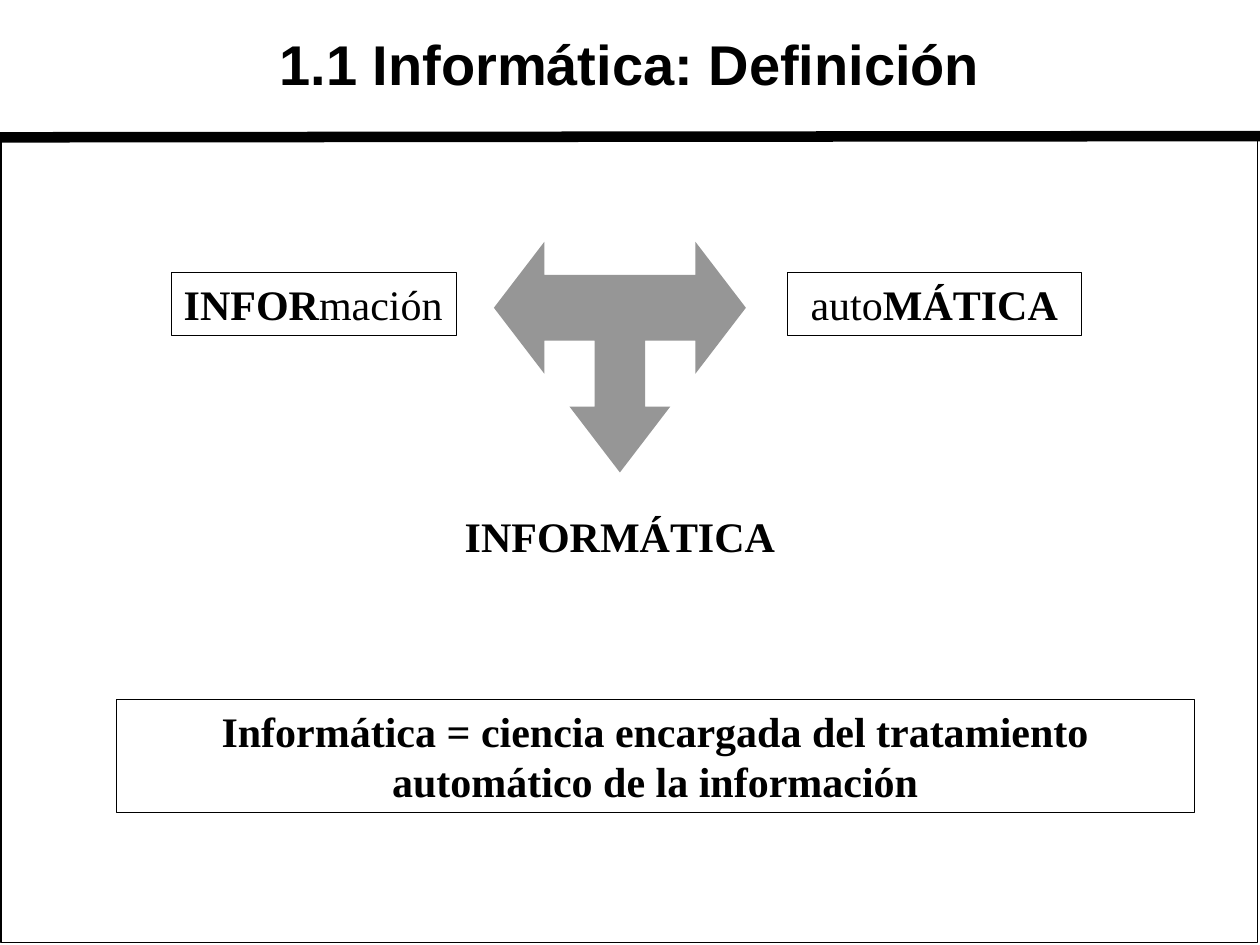
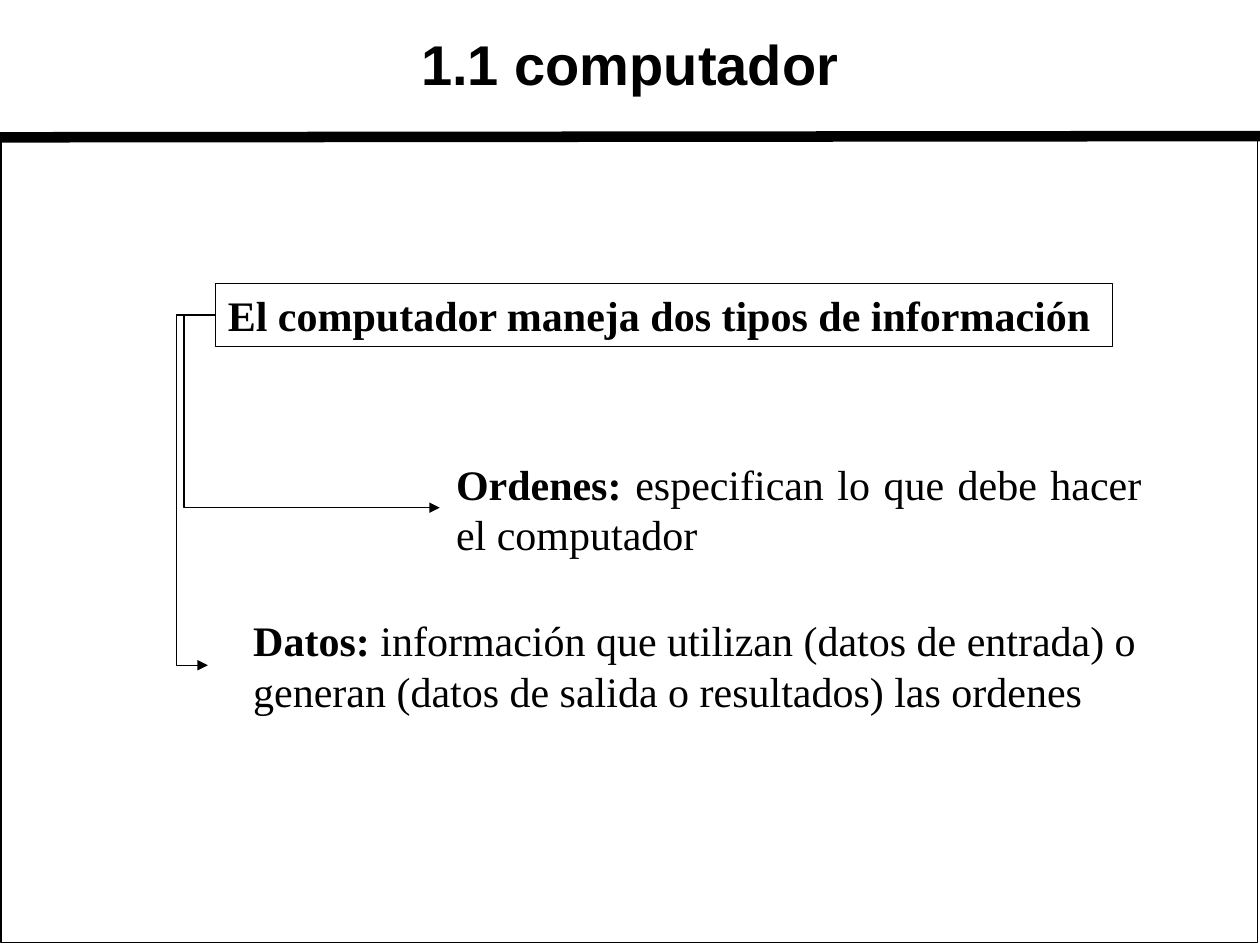
from dataclasses import dataclass

from lxml import etree
from pptx import Presentation
from pptx.dml.color import RGBColor
from pptx.enum.shapes import MSO_CONNECTOR, MSO_SHAPE
from pptx.enum.text import MSO_ANCHOR, MSO_AUTO_SIZE, PP_ALIGN
from pptx.oxml.ns import qn
from pptx.util import Emu, Inches, Pt

LEFT, CENTER, JUSTIFY = PP_ALIGN.LEFT, PP_ALIGN.CENTER, PP_ALIGN.JUSTIFY
MIDDLE, GROW = MSO_ANCHOR.MIDDLE, MSO_AUTO_SIZE.SHAPE_TO_FIT_TEXT
STRAIGHT, ELBOW = MSO_CONNECTOR.STRAIGHT, MSO_CONNECTOR.ELBOW
RECTANGLE = MSO_SHAPE.RECTANGLE

COLORS = {"ink": "000000", "arrow": "969696"}
TITLE_FONT, BODY_FONT = "Arial", "Times New Roman"
TITLE_SIZE, BODY_SIZE = Pt(32), Pt(24)
SLIDE_WIDTH, SLIDE_HEIGHT = Inches(10), Inches(7.5)
COLUMNS, ROWS = 100, 75
TITLE_ONLY = 5


@dataclass(frozen=True)
class Area:
    """Left, top, width and height in grid columns and rows."""
    left: float
    top: float
    width: float
    height: float

    def emu(self) -> tuple[Emu, Emu, Emu, Emu]:
        return col(self.left), row(self.top), col(self.width), row(self.height)


@dataclass(frozen=True)
class Statement:
    """Text with its phrases as (words, bold) pairs."""
    area: Area
    phrases: tuple[tuple[str, bool], ...]
    framed: bool = False
    wrap: bool = True
    align: PP_ALIGN = LEFT
    indent: float = 0


@dataclass(frozen=True)
class Branch:
    """Elbow arrow that turns down at column turn."""
    begin: tuple[float, float]
    end: tuple[float, float]
    turn: float


TITLE_AREA = Area(2.5, 0, 95, 10)
FRAME_AREA = Area(0.1, 10.8, 99.7, 64)
RULE_START, RULE_END = (0, 10.9), (100.2, 10.8)

DEFINITION = (
    Statement(Area(13.6, 21.6, 22.6, 5), (("INFOR", True), ("mación", False)),
              framed=True, wrap=False),
    Statement(Area(62.5, 21.6, 23.3, 5), (("auto", False), ("MÁTICA", True)),
              framed=True, align=CENTER),
    Statement(Area(35.9, 40, 26.7, 5), (("INFORMÁTICA", True),), wrap=False),
    Statement(Area(9.2, 55.5, 85.6, 9),
              (("Informática = ciencia encargada del tratamiento "
                "automático de la información", True),),
              framed=True, align=CENTER),
)
INFORMATION_TYPES = (
    Statement(Area(16.5, 48.3, 77.2, 9),
              (("Datos: ", True),
               ("información que utilizan (datos de entrada) o generan "
                "(datos de salida o resultados) las ordenes", False)), indent=2.6),
    Statement(Area(34.9, 35.8, 56.7, 9.1),
              (("Ordenes: ", True),
               ("especifican lo que debe hacer el computador", False)),
              align=JUSTIFY, indent=0.3),
    Statement(Area(17.1, 22.5, 71.2, 5),
              (("El computador maneja dos tipos de información", True),),
              framed=True, wrap=False),
)
BRANCHES = (
    Branch((17.1, 25), (34.9, 40.3), 14.6),
    Branch((17.1, 25), (16.5, 52.8), 14),
)
ARROW_AREA = Area(39.2, 19.2, 20, 18.3)
ARROW_STEPS = (10, 7)
# Left half, from the shaft's corner by the left barb to the bottom tip, in arrow steps.
ARROW_HALF = ((2, 1), (2, 0), (0, 2), (2, 4), (2, 3), (4, 3), (4, 5), (3, 5))


def col(count: float) -> Emu:
    return Emu(round(SLIDE_WIDTH * count / COLUMNS))


def row(count: float) -> Emu:
    return Emu(round(SLIDE_HEIGHT * count / ROWS))


def rgb(name: str) -> RGBColor:
    return RGBColor.from_string(COLORS[name])


def style_line(line, points: float) -> None:
    line.color.rgb = rgb("ink")
    line.width = Pt(points)


def style_font(font, name: str, size: Pt) -> None:
    font.name, font.size, font.color.rgb = name, size, rgb("ink")


def add_line(slide, kind, begin, end, points: float):
    line = slide.shapes.add_connector(
        kind, col(begin[0]), row(begin[1]), col(end[0]), row(end[1]))
    style_line(line.line, points)
    etree.SubElement(line._element.spPr, qn("a:effectLst"))
    return line


def add_outline(slide, area: Area, points: float):
    box = slide.shapes.add_shape(RECTANGLE, *area.emu())
    box.shadow.inherit = False
    box.fill.background()
    style_line(box.line, points)
    return box


def add_titled_slide(deck, heading: str):
    slide = deck.slides.add_slide(deck.slide_layouts[TITLE_ONLY])
    add_line(slide, STRAIGHT, RULE_START, RULE_END, 6)
    add_outline(slide, FRAME_AREA, 1)
    title = slide.shapes.title
    title.left, title.top, title.width, title.height = TITLE_AREA.emu()
    title.text_frame.text = heading
    title.text_frame.vertical_anchor = MIDDLE
    paragraph = title.text_frame.paragraphs[0]
    paragraph.alignment = CENTER
    style_font(paragraph.font, TITLE_FONT, TITLE_SIZE)
    paragraph.font.bold = True
    return slide


def add_statement(slide, statement: Statement) -> None:
    if statement.framed:
        box = add_outline(slide, statement.area, 0.25)
    else:
        box = slide.shapes.add_textbox(*statement.area.emu())
    frame = box.text_frame
    frame.word_wrap = statement.wrap
    frame.auto_size = GROW
    frame.vertical_anchor = MIDDLE
    frame.margin_left = Inches(0.1) + col(statement.indent)
    paragraph = frame.paragraphs[0]
    paragraph.alignment = statement.align
    style_font(paragraph.font, BODY_FONT, BODY_SIZE)
    for words, bold in statement.phrases:
        run = paragraph.add_run()
        run.text = words
        run.font.bold = bold


def add_three_way_arrow(slide) -> None:
    across, down = ARROW_STEPS
    left, top, width, height = ARROW_AREA.emu()
    mirrored = [(across - x, y) for x, y in reversed(ARROW_HALF)]
    outline = [*ARROW_HALF, (across / 2, down), *mirrored]
    builder = slide.shapes.build_freeform(
        *outline[0], scale=(width / across, height / down))
    builder.add_line_segments(outline[1:], close=True)
    arrow = builder.convert_to_shape(left, top)
    arrow.shadow.inherit = False
    arrow.fill.solid()
    arrow.fill.fore_color.rgb = rgb("arrow")
    arrow.line.fill.background()


def add_branch(slide, branch: Branch) -> None:
    arrow = add_line(slide, ELBOW, branch.begin, branch.end, 0.75)
    start, stop = branch.begin[0], branch.end[0]
    bend = round((branch.turn - start) / (stop - start) * 100000)
    geometry = arrow._element.spPr.find(qn("a:prstGeom"))
    adjustments = geometry.find(qn("a:avLst"))
    if adjustments is None:
        adjustments = etree.SubElement(geometry, qn("a:avLst"))
    etree.SubElement(adjustments, qn("a:gd"), name="adj1", fmla=f"val {bend}")
    outline = arrow._element.spPr.find(qn("a:ln"))
    etree.SubElement(outline, qn("a:tailEnd"), type="triangle")


def main() -> None:
    deck = Presentation()
    deck.slide_width, deck.slide_height = SLIDE_WIDTH, SLIDE_HEIGHT

    definition = add_titled_slide(deck, "1.1 Informática: Definición")
    add_three_way_arrow(definition)
    for statement in DEFINITION:
        add_statement(definition, statement)

    computer = add_titled_slide(deck, "1.1 computador")
    for statement in INFORMATION_TYPES:
        add_statement(computer, statement)
    for branch in BRANCHES:
        add_branch(computer, branch)

    deck.save("out.pptx")


if __name__ == "__main__":
    main()
